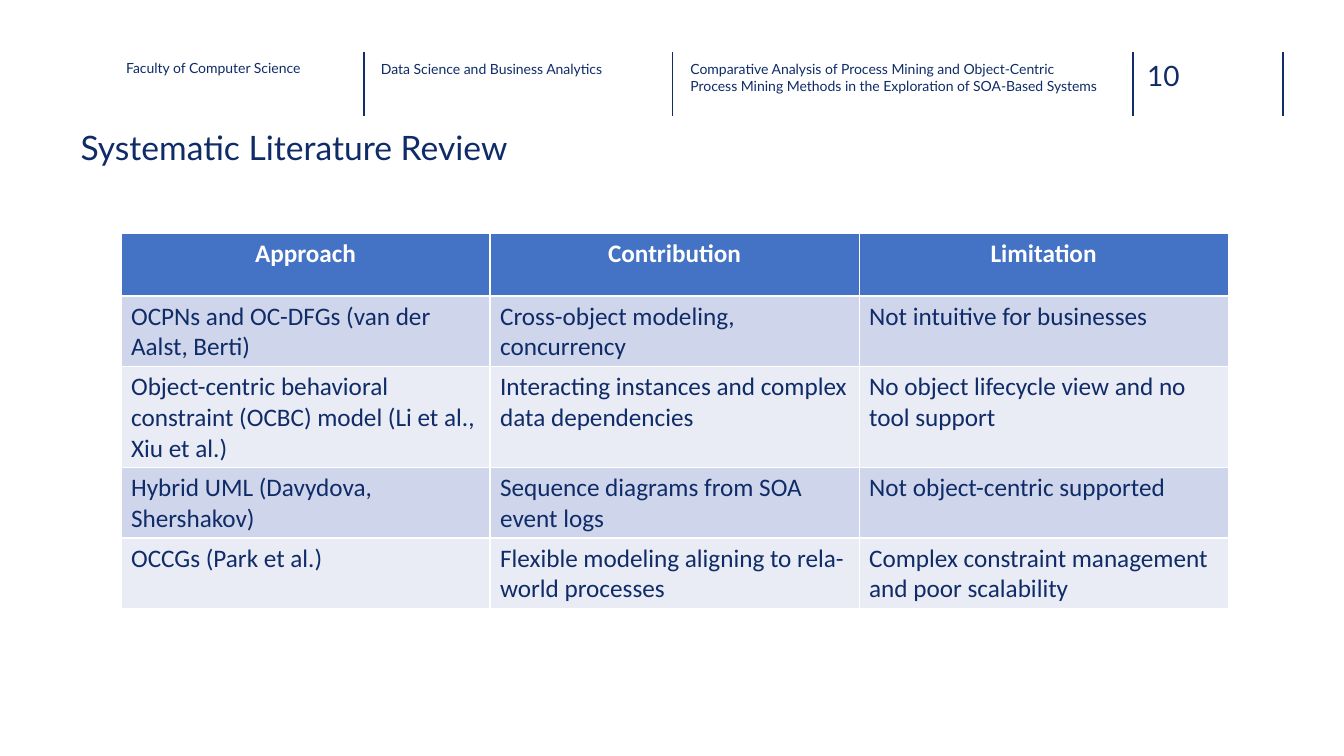
"""Build the literature review slide: a ruled header, a title and a comparison table."""
from pptx import Presentation
from pptx.dml.color import RGBColor
from pptx.enum.shapes import MSO_CONNECTOR
from pptx.enum.text import PP_ALIGN
from pptx.oxml.ns import qn
from pptx.util import Cm, Pt
from lxml.etree import SubElement

NAVY, RULE_NAVY, WHITE, HEADER_BLUE = "0F2C68", "102D69", "FFFFFF", "4472C4"
BANDS = ["CFD5EA", "E9EBF5"]

RULES = [9.17, 16.94, 28.55, 32.33]
RULE_TOP, RULE_BOTTOM = 1.3, 2.92

TEXTS = [
    ("10", 28.91, 1.47, 1.85, 0.86, 20),
    ("Systematic Literature Review", 2.03, 3.2, 30.71, 2.16, 24),
    ("Faculty of Computer Science", 3.18, 1.5, 5.28, 1.14, 10),
    ("Data Science and Business Analytics", 9.6, 1.52, 5.74, 1.14, 10),
    ("Comparative Analysis of Process Mining and Object-Centric Process Mining "
     "Methods in the Exploration of SOA-Based Systems", 17.4, 1.52, 10.39, 1.14, 10),
]

REVIEW = [
    ("Approach", "Contribution", "Limitation"),
    ("OCPNs and OC-DFGs (van der Aalst, Berti)",
     "Cross-object modeling, concurrency",
     "Not intuitive for businesses"),
    ("Object-centric behavioral constraint (OCBC) model (Li et al., Xiu et al.)",
     "Interacting instances and complex data dependencies",
     "No object lifecycle view and no tool support"),
    ("Hybrid UML (Davydova, Shershakov)",
     "Sequence diagrams from SOA event logs",
     "Not object-centric supported"),
    ("OCCGs (Park et al.)",
     "Flexible modeling aligning to rela-world processes",
     "Complex constraint management and poor scalability"),
]
TABLE_LEFT, TABLE_TOP, COLUMN_WIDTH, ROW_HEIGHT = 3.05, 5.89, 9.3, 1.57


def paint(color_format, color):
    color_format.rgb = RGBColor.from_string(color)


def style_text(paragraph, font_name, size, color, bold=False):
    font = paragraph.runs[0].font
    font.name, font.size, font.bold = font_name, Pt(size), bold
    paint(font.color, color)


def add_rule(slide, x):
    rule = slide.shapes.add_connector(
        MSO_CONNECTOR.STRAIGHT, Cm(x), Cm(RULE_TOP), Cm(x), Cm(RULE_BOTTOM))
    rule.line.width = Pt(1)
    paint(rule.line.color, RULE_NAVY)
    SubElement(rule._element.spPr, qn("a:effectLst"))


def add_text(slide, text, left, top, width, height, size):
    frame = slide.shapes.add_textbox(Cm(left), Cm(top), Cm(width), Cm(height)).text_frame
    frame.margin_left = frame.margin_top = frame.margin_right = frame.margin_bottom = 0
    frame.word_wrap = True
    frame.text = text
    style_text(frame.paragraphs[0], "Lato", size, NAVY)


def add_review_table(slide):
    rows, columns = len(REVIEW), len(REVIEW[0])
    table = slide.shapes.add_table(
        rows, columns, Cm(TABLE_LEFT), Cm(TABLE_TOP),
        Cm(columns * COLUMN_WIDTH), Cm(rows * ROW_HEIGHT)).table
    for row, texts in enumerate(REVIEW):
        header = row == 0
        for column, text in enumerate(texts):
            cell = table.cell(row, column)
            cell.text = text
            cell.fill.solid()
            paint(cell.fill.fore_color, HEADER_BLUE if header else BANDS[(row - 1) % 2])
            paragraph = cell.text_frame.paragraphs[0]
            paragraph.alignment = PP_ALIGN.CENTER if header else PP_ALIGN.LEFT
            style_text(paragraph, "Calibri", 18, WHITE if header else NAVY, header)


def main():
    presentation = Presentation()
    presentation.slide_width, presentation.slide_height = Cm(33.87), Cm(19.05)
    slide = presentation.slides.add_slide(presentation.slide_layouts[6])
    for x in RULES:
        add_rule(slide, x)
    for text in TEXTS:
        add_text(slide, *text)
    add_review_table(slide)
    presentation.save("out.pptx")


if __name__ == "__main__":
    main()
